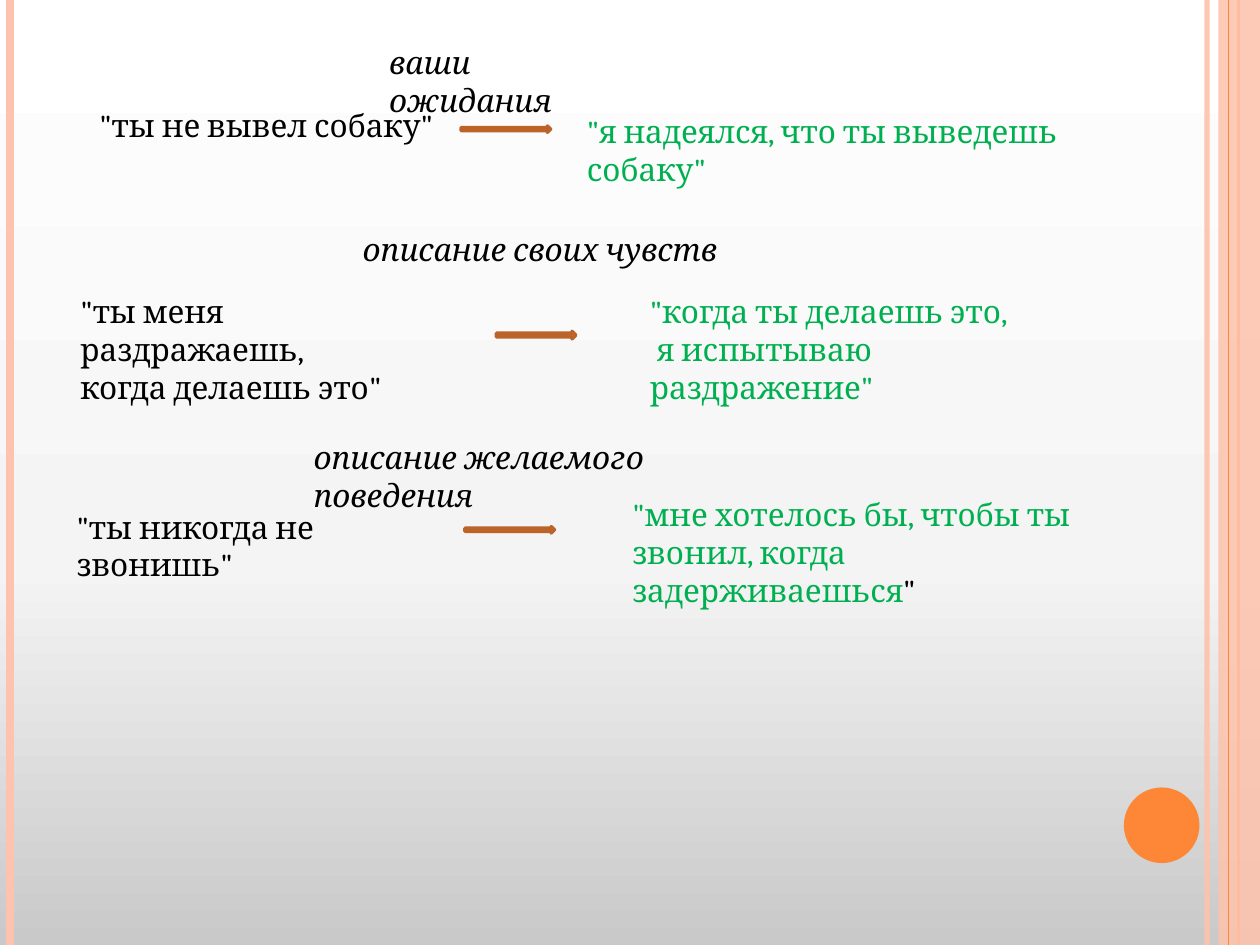
from copy import deepcopy

from lxml.etree import SubElement
from pptx import Presentation
from pptx.dml.color import RGBColor
from pptx.enum.dml import MSO_LINE
from pptx.enum.shapes import MSO_CONNECTOR, MSO_SHAPE
from pptx.enum.text import MSO_AUTO_SIZE
from pptx.oxml.ns import qn
from pptx.util import Inches, Pt

THEME = {
    "font": "Cambria",
    "size": 18,
    "black": "000000",
    "green": "00B050",
    "orange": "FE8637",
    "peach": "FEC3AE",
    "rust": "BC6329",
    "background": [(0, "C9C9C9"), (0.4, "F4F4F4"), (1, "FFFFFF")],
}
PAGE_WIDTH, PAGE_HEIGHT = 10, 7.5

STRIPES = [
    (9.58, "peach", 3, 93),
    (0.08, "peach", 4.5, 100),
    (9.83, "orange", 1.5, 100),
]
INNER_STRIPE = (9.75, "orange", 0.75, 100)
BAND = (9.67, 0, 0.33, PAGE_HEIGHT)
DISC = (8.92, 6.25, 0.6, 0.6)

EXCHANGES = [
    {
        "heading": ((2.99, 0.29, 2.11, 0.4), "ваши ожидания"),
        "accusation": ((0.69, 0.79, 2.91, 0.4), ['"ты не вывел собаку"']),
        "arrow": (3.66, 1, 0.71, 0.05),
        "reply": ((4.56, 0.84, 4.73, 0.4), ['"я надеялся, что ты выведешь собаку"']),
    },
    {
        "heading": ((2.78, 1.78, 3.03, 0.4), "описание своих чувств"),
        "accusation": ((0.54, 2.27, 3.06, 0.71),
                       ['"ты меня раздражаешь,', 'когда делаешь это"']),
        "arrow": (3.94, 2.63, 0.63, 0.06),
        "reply": ((5.06, 2.27, 3.53, 0.71),
                  ['"когда ты делаешь это,', ' я испытываю раздражение"']),
    },
    {
        "heading": ((2.39, 3.43, 4.03, 0.4), "описание желаемого поведения"),
        "accusation": ((0.51, 3.98, 3.08, 0.4), ['"ты никогда не звонишь"']),
        "arrow": (3.69, 4.18, 0.71, 0.05),
        "reply": ((4.92, 3.88, 4.02, 0.71),
                  ['"мне хотелось бы, чтобы ты звонил, когда задерживаешься']),
        "closing": '"',
    },
]


def color(name):
    return RGBColor.from_string(THEME[name])


def set_opacity(element, percent):
    if percent < 100:
        for node in element.iter(qn("a:srgbClr")):
            SubElement(node, qn("a:alpha"), val=str(percent * 1000))


def paint_background(page):
    fill = page.background.fill
    fill.gradient()
    fill.gradient_angle = 90
    first = page.element.xpath(".//a:gs")[0]
    first.addnext(deepcopy(first))
    for stop, (position, value) in zip(fill.gradient_stops, THEME["background"]):
        stop.position = position
        stop.color.rgb = RGBColor.from_string(value)


def add_stripe(page, x, name, width, opacity):
    stripe = page.shapes.add_connector(
        MSO_CONNECTOR.STRAIGHT, Inches(x), 0, Inches(x), Inches(PAGE_HEIGHT))
    stripe.line.color.rgb = color(name)
    stripe.line.width = Pt(width)
    stripe.line.dash_style = MSO_LINE.SOLID
    properties = stripe.element.spPr
    set_opacity(properties, opacity)
    SubElement(properties, qn("a:effectLst"))


def add_figure(page, kind, place, fill, line=None, opacity=100):
    figure = page.shapes.add_shape(kind, *map(Inches, place))
    figure.shadow.inherit = False
    figure.fill.solid()
    figure.fill.fore_color.rgb = color(fill)
    set_opacity(figure.element.spPr, opacity)
    if line:
        figure.line.color.rgb = color(line)
        figure.line.width = Pt(2)
    else:
        figure.line.fill.background()


def add_span(para, text, name, italic=False):
    span = para.add_run()
    span.text = text
    formats = {"name": THEME["font"], "size": Pt(THEME["size"]), "italic": italic}
    for key, value in formats.items():
        setattr(span.font, key, value)
    span.font.color.rgb = color(name)


def add_text(page, place, lines, name, italic=False, closing=""):
    frame = page.shapes.add_textbox(*map(Inches, place)).text_frame
    frame.word_wrap = True
    frame.auto_size = MSO_AUTO_SIZE.SHAPE_TO_FIT_TEXT
    for index, line in enumerate(lines):
        para = frame.add_paragraph() if index else frame.paragraphs[0]
        add_span(para, line, name, italic)
    if closing:
        add_span(para, closing, "black")


def main():
    deck = Presentation()
    deck.slide_width, deck.slide_height = Inches(PAGE_WIDTH), Inches(PAGE_HEIGHT)
    page = deck.slides.add_slide(deck.slide_layouts.get_by_name("Blank"))
    paint_background(page)
    for stripe in STRIPES:
        add_stripe(page, *stripe)
    add_figure(page, MSO_SHAPE.RECTANGLE, BAND, "peach", opacity=87)
    add_stripe(page, *INNER_STRIPE)
    add_figure(page, MSO_SHAPE.OVAL, DISC, "orange")

    for exchange in EXCHANGES:
        add_text(page, *exchange["accusation"], "black")
        add_figure(page, MSO_SHAPE.RIGHT_ARROW, exchange["arrow"], "orange", "rust")
        add_text(page, *exchange["reply"], "green", closing=exchange.get("closing", ""))
    for exchange in EXCHANGES:
        place, heading = exchange["heading"]
        add_text(page, place, [heading], "black", italic=True)
    deck.save("out.pptx")


if __name__ == "__main__":
    main()
